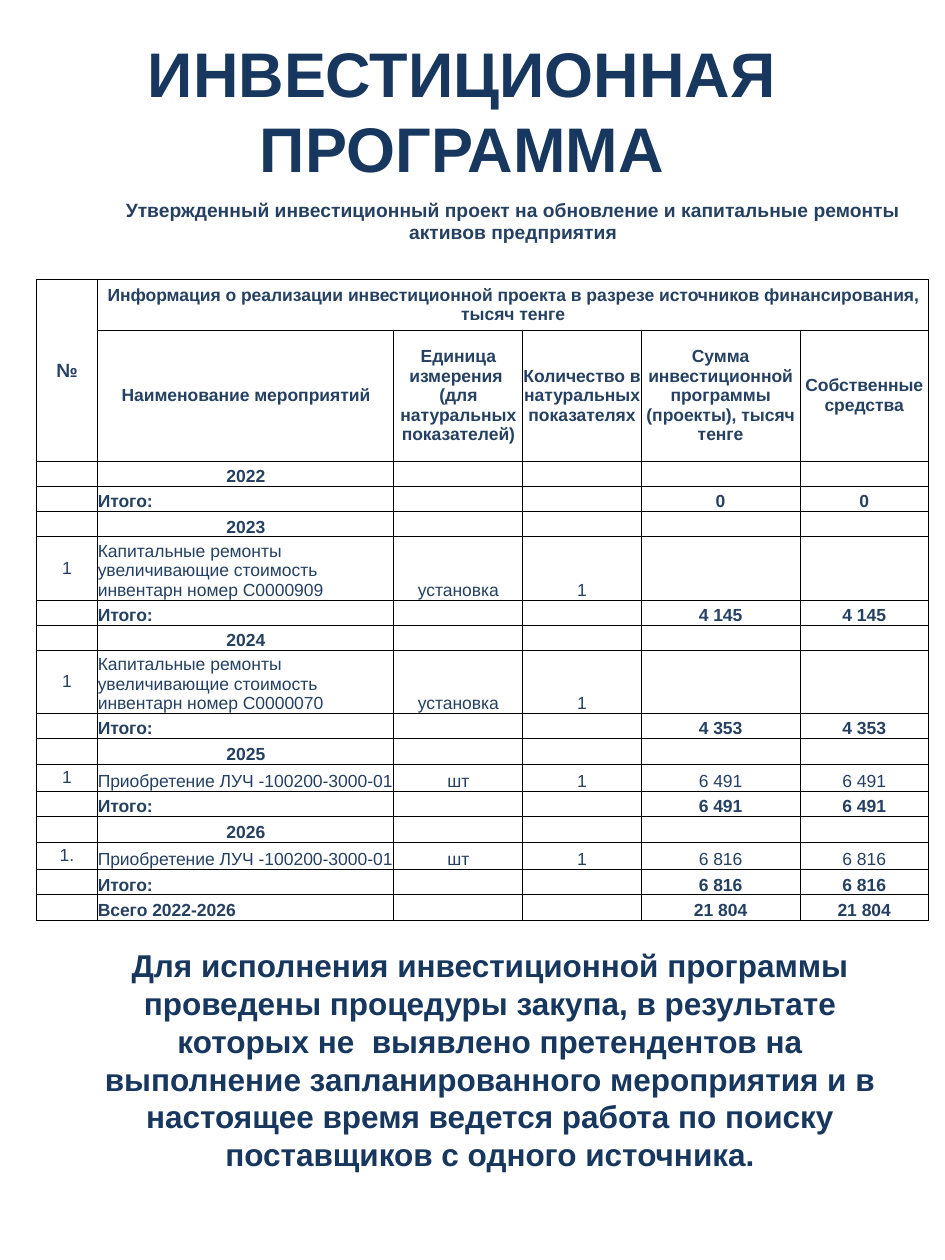
from lxml.etree import SubElement
from pptx import Presentation
from pptx.dml.color import RGBColor
from pptx.enum.text import MSO_ANCHOR as Anchor, PP_ALIGN as Align
from pptx.oxml.ns import qn
from pptx.util import Pt

FONT = "Arial"
COLORS = {"heading": "17375E", "table": "254061", "border": "000000"}

TITLE = "ИНВЕСТИЦИОННАЯ ПРОГРАММА"
SUBTITLE = ("Утвержденный инвестиционный проект на обновление и капитальные "
            "ремонты активов предприятия")
TABLE_HEADING = ("Информация о реализации инвестиционной проекта в разрезе "
                 "источников финансирования, тысяч тенге")
COLUMN_HEADINGS = [
    "Наименование мероприятий",
    "Единица измерения \v(для натуральных показателей)",
    "Количество в натуральных показателях",
    "Сумма инвестиционной программы (проекты), тысяч тенге",
    "Собственные средства",
]
REPAIR = "Капитальные ремонты увеличивающие стоимость инвентарн номер "
PURCHASE = "Приобретение ЛУЧ -100200-3000-01"
# year, measure (number, name, unit, quantity, sum, own funds), year total
YEARS = [
    ("2022", None, "0"),
    ("2023", ("1", REPAIR + "С0000909", "установка", "1", "", ""), "4 145"),
    ("2024", ("1", REPAIR + "С0000070", "установка", "1", "", ""), "4 353"),
    ("2025", ("1", PURCHASE, "шт", "1", "6 491", "6 491"), "6 491"),
    ("2026", ("1.", PURCHASE, "шт", "1", "6 816", "6 816"), "6 816"),
]
GRAND_TOTAL = ("Всего 2022-2026", "21 804")
CONCLUSION = ("Для исполнения инвестиционной программы проведены процедуры закупа, "
              "в результате которых не  выявлено претендентов на выполнение "
              "запланированного мероприятия и в настоящее время ведется работа "
              "по поиску поставщиков с одного источника.")

TITLE_BOX = (20.9, 20.2, 486, 85)
CONCLUSION_BOX = (37.4, 547.2, 485.3, 116.6)
TABLE_LEFT, TABLE_TOP = 20.7, 110.9
COLUMN_WIDTHS = [35.2, 169.2, 30.2, 43.5, 34.6, 33.1, 37.4, 53.3, 17.3, 56.2]
HEADER_HEIGHTS = [31.7, 17.3, 28.8, 74.9]
LINE_HEIGHT, REPAIR_HEIGHT, PURCHASE_HEIGHT = 14.4, 33.4, 15.8
FIRST_COLUMNS = [0, 1, 2, 4, 6, 8]  # where each visible column starts


def style(paragraph, size, color, bold=True, align=Align.CENTER):
    paragraph.alignment = align
    for font in [paragraph.font] + [run.font for run in paragraph.runs]:
        font.name, font.size, font.bold = FONT, Pt(size), bold
        font.color.rgb = RGBColor.from_string(COLORS[color])


def add_text(slide, box, text, size):
    frame = slide.shapes.add_textbox(*map(Pt, box)).text_frame
    frame.word_wrap = True
    frame.vertical_anchor = Anchor.MIDDLE
    frame.text = text
    style(frame.paragraphs[0], size, "heading")


def set_borders(cell, drawn):
    """Draw the sides named in drawn (letters of LRTB) and hide the others."""
    properties = cell._tc.get_or_add_tcPr()
    for side in "LRTB":
        line = SubElement(properties, qn(f"a:ln{side}"), w=str(Pt(0.5)))
        if side in drawn:
            fill = SubElement(line, qn("a:solidFill"))
            SubElement(fill, qn("a:srgbClr"), val=COLORS["border"])
        else:
            SubElement(line, qn("a:noFill"))


def write(cell, text, size=10, bold=True, align=Align.CENTER, anchor=Anchor.MIDDLE):
    cell.text = text
    cell.vertical_anchor = anchor
    style(cell.text_frame.paragraphs[0], size, "table", bold, align)


def body_rows():
    """Yield (height, bold, name alignment, six texts) for each body row."""
    for year, measure, total in YEARS:
        yield LINE_HEIGHT, True, Align.CENTER, ("", year, "", "", "", "")
        if measure:
            is_repair = measure[1].startswith(REPAIR)
            height = REPAIR_HEIGHT if is_repair else PURCHASE_HEIGHT
            yield height, False, Align.LEFT, measure
        yield LINE_HEIGHT, True, Align.LEFT, ("", "Итого:", "", "", total, total)
    name, total = GRAND_TOTAL
    yield LINE_HEIGHT, True, Align.LEFT, ("", name, "", "", total, total)


def add_program_table(slide):
    body = list(body_rows())
    heights = HEADER_HEIGHTS + [row[0] for row in body]
    table = slide.shapes.add_table(
        len(heights), len(COLUMN_WIDTHS), Pt(TABLE_LEFT), Pt(TABLE_TOP),
        Pt(sum(COLUMN_WIDTHS)), Pt(sum(heights))).table
    table.first_row = table.horz_banding = False
    for column, width in zip(table.columns, COLUMN_WIDTHS):
        column.width = Pt(width)

    for r, height in enumerate(heights):
        table.rows[r].height = Pt(height)
        for cell in table.rows[r].cells:
            cell.margin_left = cell.margin_right = 0
            cell.margin_top = cell.margin_bottom = 0
            set_borders(cell, ["", "B"][r] if r < 2 else "LRTB")
            cell.fill.background()
            write(cell, "")

    def merge(top, left, bottom, right):
        table.cell(top, left).merge(table.cell(bottom, right))

    merge(0, 1, 0, 9)
    merge(2, 1, 2, 9)
    merge(2, 0, 3, 0)
    for left in (1, 3, 5, 7):
        merge(1, left, 1, left + 1)
    for r in range(3, len(heights)):
        for left in FIRST_COLUMNS[2:]:
            merge(r, left, r, left + 1)

    write(table.cell(0, 1), SUBTITLE, 11)
    write(table.cell(2, 0), "№", 11)
    write(table.cell(2, 1), TABLE_HEADING)
    for c, heading in zip(FIRST_COLUMNS[1:], COLUMN_HEADINGS):
        write(table.cell(3, c), heading)
    for r, (_, bold, name_align, texts) in enumerate(body, len(HEADER_HEIGHTS)):
        for c, text in zip(FIRST_COLUMNS, texts):
            write(table.cell(r, c), text, bold=bold,
                  align=name_align if c == 1 else Align.CENTER,
                  anchor=Anchor.MIDDLE if c == 0 else Anchor.BOTTOM)


def main():
    deck = Presentation()
    deck.slide_width, deck.slide_height = Pt(540), Pt(720)
    slide = deck.slides.add_slide(deck.slide_layouts[6])
    add_text(slide, TITLE_BOX, TITLE, 36)
    add_program_table(slide)
    add_text(slide, CONCLUSION_BOX, CONCLUSION, 18)
    deck.save("out.pptx")


if __name__ == "__main__":
    main()
